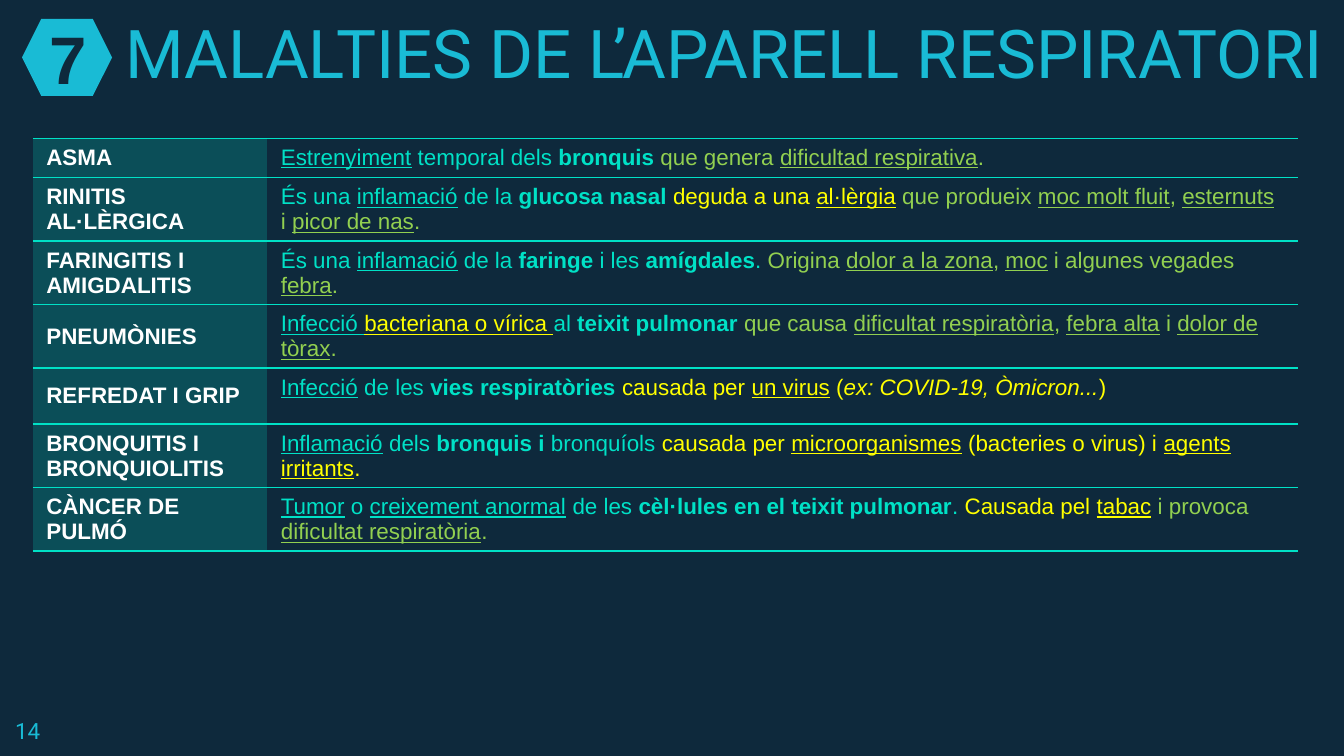
from lxml.etree import SubElement
from pptx import Presentation
from pptx.dml.color import RGBColor
from pptx.enum.shapes import MSO_SHAPE
from pptx.enum.text import MSO_ANCHOR, PP_ALIGN
from pptx.oxml.ns import qn
from pptx.util import Inches, Pt

NAVY = RGBColor(0x0E, 0x29, 0x3C)
CYAN = RGBColor(0x19, 0xBB, 0xD5)
PETROL = RGBColor(0x0B, 0x4E, 0x58)
TURQUOISE = RGBColor(0x00, 0xE1, 0xC6)
GREEN = RGBColor(0x92, 0xD0, 0x50)
YELLOW = RGBColor(0xFF, 0xFF, 0x00)
WHITE = RGBColor(0xFF, 0xFF, 0xFF)

MARKS = {"_": "underline", "*": "bold", "/": "italic"}

# Row height in percent, disease, and definition as (colour, marked text) parts.
DISEASES = [
    (5.2, "ASMA", [
        (TURQUOISE, "_Estrenyiment_ temporal dels *bronquis *"),
        (GREEN, "que genera _dificultad respirativa_.")]),
    (8.4, "RINITIS AL·LÈRGICA", [
        (TURQUOISE, "És una _inflamació_ de la *glucosa nasal *"),
        (YELLOW, "deguda a una _al·lèrgia_* *"),
        (GREEN, "que produeix _moc molt fluit_, _esternuts_ i _picor de nas_.")]),
    (8.4, "FARINGITIS I AMIGDALITIS", [
        (TURQUOISE, "És una _inflamació_ de la *faringe* i les *amígdales*. "),
        (GREEN, "Origina _dolor a la zona_, _moc_ i algunes vegades _febra_.")]),
    (8.4, "PNEUMÒNIES", [
        (TURQUOISE, "_Infecció _"),
        (YELLOW, "_bacteriana o vírica _"),
        (TURQUOISE, "al *teixit pulmonar *"),
        (GREEN, "que causa _dificultat respiratòria_, _febra alta_ i _dolor de tòrax_.")]),
    (7.4, "REFREDAT I GRIP", [
        (TURQUOISE, "_Infecció_ de les *vies respiratòries *"),
        (YELLOW, "causada per _un virus_ (/ex: COVID-19, Òmicron.../)")]),
    (8.4, "BRONQUITIS I BRONQUIOLITIS", [
        (TURQUOISE, "_Inflamació_ dels *bronquis i *bronquíols "),
        (YELLOW, "causada per _microorganismes_ (bacteries o virus) i _agents irritants_.")]),
    (8.4, "CÀNCER DE PULMÓ", [
        (TURQUOISE, "_Tumor_ o _creixement anormal_ de les *cèl·lules en el teixit pulmonar*. "),
        (YELLOW, "Causada pel _tabac_"),
        (WHITE, " "),
        (GREEN, "i provoca _dificultat respiratòria_.")]),
]


def marked_pieces(text):
    """Yield (text, format) pieces; each mark switches its format on or off."""
    state = dict.fromkeys(MARKS.values(), False)
    piece = ""
    for letter in text:
        if letter not in MARKS:
            piece += letter
            continue
        if piece:
            yield piece, dict(state)
        piece = ""
        state[MARKS[letter]] = not state[MARKS[letter]]
    if piece:
        yield piece, state


class SlideBuilder:
    """Holds the style and the slide; lengths are percent of the slide's size."""

    def __init__(self, presentation, background):
        self.width = presentation.slide_width
        self.height = presentation.slide_height
        self.slide = presentation.slides.add_slide(presentation.slide_layouts[6])
        fill = self.slide.background.fill
        fill.solid()
        fill.fore_color.rgb = background

    def across(self, share):
        return round(self.width * share / 100)

    def down(self, share):
        return round(self.height * share / 100)

    def box(self, left, top, width, height):
        return self.across(left), self.down(top), self.across(width), self.down(height)

    def run(self, paragraph, text, colour, **formats):
        run = paragraph.add_run()
        run.text = text
        run.font.color.rgb = colour
        for name, value in formats.items():
            setattr(run.font, name, value)

    def text(self, area, text, size, anchor=MSO_ANCHOR.TOP):
        frame = self.slide.shapes.add_textbox(*self.box(*area)).text_frame
        frame.word_wrap = True
        frame.vertical_anchor = anchor
        for side in ("left", "right", "top", "bottom"):
            setattr(frame, f"margin_{side}", Inches(0.1))
        self.run(frame.paragraphs[0], text, CYAN, name="Roboto", size=Pt(size))

    def badge(self, area, text):
        shape = self.slide.shapes.add_shape(MSO_SHAPE.HEXAGON, *self.box(*area))
        shape.shadow.inherit = False
        shape.fill.solid()
        shape.fill.fore_color.rgb = CYAN
        shape.line.fill.background()
        shape.text_frame.vertical_anchor = MSO_ANCHOR.MIDDLE
        paragraph = shape.text_frame.paragraphs[0]
        paragraph.alignment = PP_ALIGN.CENTER
        self.run(paragraph, text, NAVY, name="Arial", size=Pt(36), bold=True)

    def borders(self, cell):
        """Rule the cell above and below, and leave its sides open."""
        properties = cell._tc.get_or_add_tcPr()
        for position, side in enumerate(("lnL", "lnR", "lnT", "lnB")):
            line = SubElement(properties, qn(f"a:{side}"), w=str(Pt(1)))
            properties.insert(position, line)
            if side in ("lnL", "lnR"):
                SubElement(line, qn("a:noFill"))
            else:
                fill = SubElement(line, qn("a:solidFill"))
                SubElement(fill, qn("a:srgbClr"), val=str(TURQUOISE))

    def cell(self, cell, parts, fill, anchor, margins, **formats):
        cell.fill.solid()
        cell.fill.fore_color.rgb = fill
        cell.vertical_anchor = anchor
        cell.margin_top, cell.margin_bottom = map(Inches, margins)
        self.borders(cell)
        for colour, text in parts:
            for piece, marks in marked_pieces(text):
                self.run(cell.text_frame.paragraphs[0], piece, colour,
                         name="Arial", size=Pt(12), **{**marks, **formats})

    def definitions(self, left, top, columns, entries):
        total = sum(height for height, _, _ in entries)
        table = self.slide.shapes.add_table(
            len(entries), len(columns), *self.box(left, top, sum(columns), total)).table
        table.first_row = table.horz_banding = False
        for column, width in zip(table.columns, columns):
            column.width = self.across(width)
        for row, (height, term, parts) in zip(table.rows, entries):
            row.height = self.down(height)
            self.cell(row.cells[0], [(WHITE, term)], PETROL, MSO_ANCHOR.MIDDLE,
                      (0.03, 0.03), bold=True)
            self.cell(row.cells[1], parts, NAVY, MSO_ANCHOR.TOP, (0.05, 0.02))


def main():
    presentation = Presentation()
    presentation.slide_width = Inches(10)
    presentation.slide_height = Inches(5.625)
    builder = SlideBuilder(presentation, NAVY)
    builder.text((8.35, 1.2, 93.4, 12.8), "MALALTIES DE L’APARELL RESPIRATORI", 36,
                 MSO_ANCHOR.BOTTOM)
    builder.text((0.15, 93.1, 6, 6.9), "14", 12)
    builder.badge((1.64, 2.5, 6.7, 10.2), "7")
    builder.definitions(2.45, 18.3, (17.45, 76.7), DISEASES)
    presentation.save("out.pptx")


if __name__ == "__main__":
    main()
